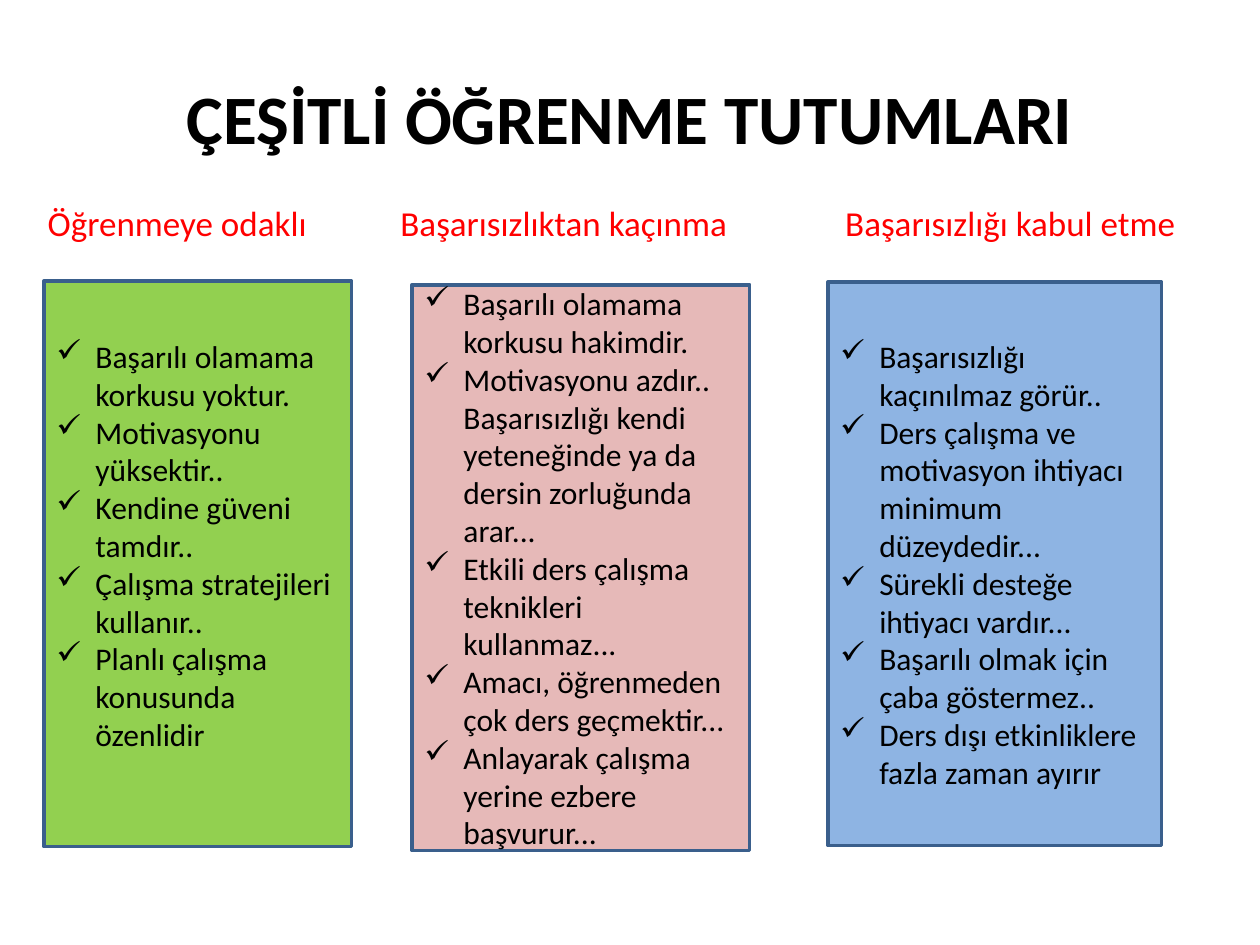
from dataclasses import dataclass

from lxml.etree import SubElement
from pptx import Presentation
from pptx.dml.color import RGBColor
from pptx.enum.shapes import MSO_SHAPE
from pptx.enum.text import MSO_ANCHOR, PP_ALIGN
from pptx.oxml.ns import qn
from pptx.util import Inches, Pt

BLACK = RGBColor(0x00, 0x00, 0x00)
RED = RGBColor(0xFF, 0x00, 0x00)
BORDER = RGBColor(0x3A, 0x5F, 0x8C)
GREEN = RGBColor(0x92, 0xD0, 0x50)
PINK = RGBColor(0xE6, 0xB9, 0xB8)
BLUE = RGBColor(0x8E, 0xB4, 0xE3)

FONT = "Calibri"
INDENT = Inches(0.31)
HEADING_LEFT = 0.28
TEXT_INSET = 0.1


@dataclass(frozen=True)
class Attitude:
    heading: str
    heading_start: float  # inches from the slide's left edge
    frame: tuple[float, float, float, float]  # left, top, width, height
    fill: RGBColor
    points: tuple[str, ...]
    bottom_inset: float = 0.05


ATTITUDES = (
    Attitude("Öğrenmeye odaklı", 0.38, (0.35, 2.23, 2.44, 4.49), GREEN, (
        "Başarılı olamama korkusu yoktur.",
        "Motivasyonu yüksektir..",
        "Kendine güveni tamdır..",
        "Çalışma stratejileri kullanır..",
        "Planlı çalışma konusunda özenlidir",
    ), bottom_inset=0.35),
    Attitude("Başarısızlıktan kaçınma", 3.18, (3.27, 2.26, 2.68, 4.49), PINK, (
        "Başarılı olamama korkusu hakimdir.",
        "Motivasyonu azdır.. Başarısızlığı kendi yeteneğinde ya da "
        "dersin zorluğunda arar...",
        "Etkili ders çalışma teknikleri kullanmaz...",
        "Amacı, öğrenmeden çok ders geçmektir...",
        "Anlayarak çalışma yerine ezbere başvurur...",
    )),
    Attitude("Başarısızlığı kabul etme", 6.71, (6.57, 2.24, 2.65, 4.47), BLUE, (
        "Başarısızlığı kaçınılmaz görür..",
        "Ders çalışma ve motivasyon ihtiyacı minimum düzeydedir...",
        "Sürekli desteğe ihtiyacı vardır...",
        "Başarılı olmak için çaba göstermez..",
        "Ders dışı etkinliklere fazla zaman ayırır",
    )),
)


def style_paragraph(paragraph, size: float, color: RGBColor, bold: bool = False) -> None:
    for span in paragraph.runs:
        span.font.name = FONT
        span.font.size = Pt(size)
        span.font.bold = bold
        span.font.color.rgb = color


def add_title(page, text: str) -> None:
    box = page.shapes.add_textbox(*map(Inches, (0.5, 0.3, 9, 1.01)))
    frame = box.text_frame
    frame.word_wrap = True
    frame.vertical_anchor = MSO_ANCHOR.MIDDLE
    frame.margin_top = Inches(0.3)
    frame.text = text
    frame.paragraphs[0].alignment = PP_ALIGN.CENTER
    style_paragraph(frame.paragraphs[0], 39.6, BLACK, bold=True)


def add_headings(page, attitudes: tuple[Attitude, ...]) -> None:
    """Write all headings on one line, each at its own tab stop."""
    box = page.shapes.add_textbox(*map(Inches, (HEADING_LEFT, 1.55, 9.22, 5.15)))
    box.text_frame.word_wrap = True
    paragraph = box.text_frame.paragraphs[0]
    paragraph.text = "\t".join(attitude.heading for attitude in attitudes)
    style_paragraph(paragraph, 20, RED)
    tabs = SubElement(paragraph._p.get_or_add_pPr(), qn("a:tabLst"))
    for attitude in attitudes[1:]:
        stop = Inches(attitude.heading_start - HEADING_LEFT - TEXT_INSET)
        SubElement(tabs, qn("a:tab"), pos=str(stop), algn="l")


def add_check_bullet(paragraph) -> None:
    properties = paragraph._p.get_or_add_pPr()
    properties.set("marL", str(INDENT))
    properties.set("indent", str(-INDENT))
    SubElement(properties, qn("a:buChar"), char="✓")


def add_panel(page, attitude: Attitude) -> None:
    panel = page.shapes.add_shape(MSO_SHAPE.RECTANGLE, *map(Inches, attitude.frame))
    panel.shadow.inherit = False
    panel.fill.solid()
    panel.fill.fore_color.rgb = attitude.fill
    panel.line.color.rgb = BORDER
    panel.line.width = Pt(2)
    frame = panel.text_frame
    frame.word_wrap = True
    frame.vertical_anchor = MSO_ANCHOR.MIDDLE
    frame.margin_bottom = Inches(attitude.bottom_inset)
    frame.text = "\n".join(attitude.points)
    for paragraph in frame.paragraphs:
        paragraph.alignment = PP_ALIGN.LEFT
        add_check_bullet(paragraph)
        style_paragraph(paragraph, 18, BLACK)


def main() -> None:
    deck = Presentation()
    deck.slide_width, deck.slide_height = Inches(10), Inches(7.5)
    page = deck.slides.add_slide(deck.slide_layouts[6])
    add_title(page, "ÇEŞİTLİ ÖĞRENME TUTUMLARI")
    add_headings(page, ATTITUDES)
    for attitude in ATTITUDES:
        add_panel(page, attitude)
    deck.save("out.pptx")


if __name__ == "__main__":
    main()
